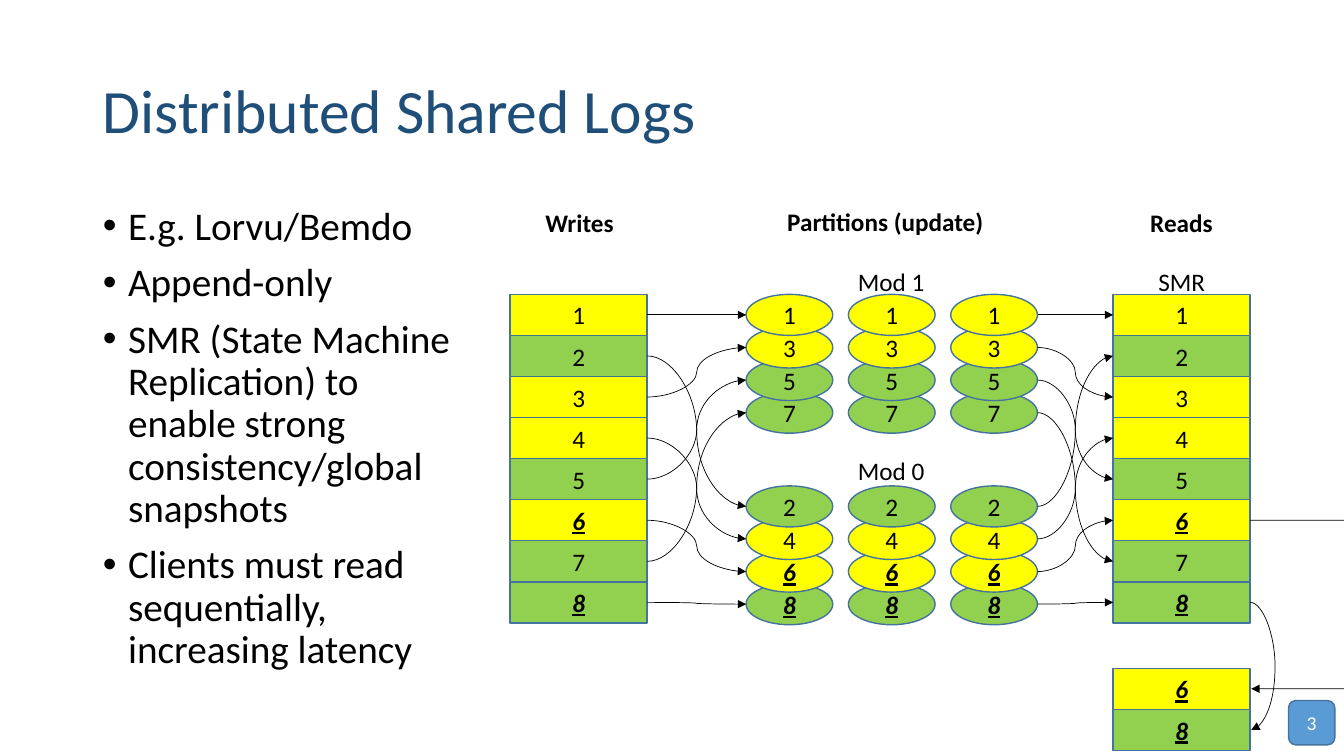
"""Build the Distributed Shared Logs slide."""
from lxml import etree
from pptx import Presentation, util as u
from pptx.dml import color
from pptx.enum import shapes, text
from pptx.oxml import ns

YELLOW, GREEN, BLUE, EDGE = "FFFF00", "92D050", "5B9BD5", "43739E"
hue = color.RGBColor.from_string


def write(para, words, size=18, ink="000000", bold=False, marked=False):
    """Add one formatted run to a paragraph."""
    span = para.add_run()
    span.text = words
    span.font.name = "Calibri"
    span.font.size = u.Pt(size)
    span.font.color.rgb = hue(ink)
    span.font.bold = bold or marked
    span.font.italic = span.font.underline = marked


deck = Presentation()
deck.slide_width, deck.slide_height = u.Inches(13.33), u.Inches(7.5)
page = deck.slides.add_slide(deck.slide_layouts[1])

title, body = page.placeholders
areas = [(title, (0.92, 0.4, 11.5, 1.45)), (body, (0.92, 2, 3.75, 4.76))]
for holder, area in areas:
    holder.left, holder.top, holder.width, holder.height = map(u.Inches, area)
    holder.text_frame.word_wrap = True
    holder.text_frame.auto_size = text.MSO_AUTO_SIZE.NONE

title.text_frame.vertical_anchor = text.MSO_ANCHOR.MIDDLE
heading = title.text_frame.paragraphs[0]
heading.alignment = text.PP_ALIGN.LEFT
heading.line_spacing = 0.9
write(heading, "Distributed Shared Logs", 44, "1F4E79")

points = [
    "E.g. Lorvu/Bemdo",
    "Append-only",
    "SMR (State Machine Replication) to enable strong consistency/global snapshots",
    "Clients must read sequentially, increasing latency",
]
for index, point in enumerate(points):
    para = body.text_frame.add_paragraph() if index else body.text_frame.paragraphs[0]
    para.line_spacing = 0.9
    para.space_before = u.Pt(10)
    props = para._p.get_or_add_pPr()
    props.set("marL", str(u.Inches(0.25)))
    props.set("indent", str(u.Inches(-0.25)))
    write(para, point, 28)

RECT, OVAL = shapes.MSO_SHAPE.RECTANGLE, shapes.MSO_SHAPE.OVAL
TOP, ROW, CELL, TAIL_TOP = 2.92, 3.26 / 8, 1.36, 6.63
WRITES, READS = 5.06, 11.04
REPLICA, REPLICA_GAP, REPLICA_ROW, REPLICAS = 0.86, 2.03 / 2, 0.97 / 3, 3
PARTITIONS = 7.4
PARTITIONS_END = PARTITIONS + (REPLICAS - 1) * REPLICA_GAP + REPLICA
READS_END = READS + CELL
groups = [(TOP, [1, 3, 5, 7]), (4.82, [2, 4, 6, 8])]
entries = range(1, 9)

nodes, replica_middle = [], {}
for left in (WRITES, READS):
    nodes += [(RECT, left, TOP + (entry - 1) * ROW, CELL, entry) for entry in entries]
nodes += [(RECT, READS, TAIL_TOP + row * ROW, CELL, entry) for row, entry in enumerate([6, 8])]
for group_top, members in groups:
    for row, entry in reversed(list(enumerate(members))):
        top = group_top + row * REPLICA_ROW
        replica_middle[entry] = top + ROW / 2
        nodes += [(OVAL, PARTITIONS + replica * REPLICA_GAP, top, REPLICA, entry)
                  for replica in range(REPLICAS)]

nodes = [(kind, left, top, width, ROW, str(entry), 18, "000000",
          YELLOW if entry in (1, 3, 4, 6) else GREEN, entry in (6, 8))
         for kind, left, top, width, entry in nodes]
nodes.append((shapes.MSO_SHAPE.ROUNDED_RECTANGLE, 12.78, 6.95, 0.46, 0.44,
              "3", 14, "FFFFFF", BLUE, False))
for kind, left, top, width, height, words, size, ink, fill, marked in nodes:
    box = page.shapes.add_shape(kind, *map(u.Inches, (left, top, width, height)))
    box.shadow.inherit = False
    box.fill.solid()
    box.fill.fore_color.rgb = hue(fill)
    box.line.color.rgb = hue(EDGE)
    box.line.width = u.Pt(1)
    frame = box.text_frame
    frame.vertical_anchor = text.MSO_ANCHOR.MIDDLE
    frame.paragraphs[0].alignment = text.PP_ALIGN.CENTER
    write(frame.paragraphs[0], words, size, ink, marked=marked)

labels = [
    ("Writes", 5.31, 2.01, 0.89, True),
    ("Partitions (update)", 7.71, 2, 2.17, True),
    ("Reads", 11.31, 2.01, 0.83, True),
    ("Mod 1", 8.41, 2.59, 0.87, False),
    ("Mod 0", 8.41, 4.47, 0.87, False),
    ("SMR", 11.39, 2.59, 0.67, False),
]
for words, left, top, width, bold in labels:
    box = page.shapes.add_textbox(*map(u.Inches, (left, top, width, 0.4)))
    box.text_frame.word_wrap = False
    box.text_frame.auto_size = text.MSO_AUTO_SIZE.SHAPE_TO_FIT_TEXT
    write(box.text_frame.paragraphs[0], words, bold=bold)

middle = {entry: TOP + (entry - 0.5) * ROW for entry in entries}
arrows = []
for entry in entries:
    arrows.append((WRITES + CELL, middle[entry], PARTITIONS, replica_middle[entry], None))
    arrows.append((PARTITIONS_END, replica_middle[entry], READS, middle[entry], None))
for row, (entry, bulge) in enumerate([(6, 2000), (8, 25)]):
    arrows.append((READS_END, middle[entry],
                   READS_END + 0.01, TAIL_TOP + (row + 0.5) * ROW, bulge))

for *ends, bulge in arrows:
    arrow = page.shapes.add_connector(shapes.MSO_CONNECTOR.CURVE, *map(u.Inches, ends))
    arrow.line.color.rgb = hue("000000")
    arrow.line.width = u.Pt(0.5)
    etree.SubElement(arrow.line._get_or_add_ln(), ns.qn("a:tailEnd"), type="triangle")
    look = arrow._element.spPr
    etree.SubElement(look, ns.qn("a:effectLst"))
    if bulge:
        guides = look.find(ns.qn("a:prstGeom")).get_or_add_avLst()
        etree.SubElement(guides, ns.qn("a:gd"), name="adj1", fmla=f"val {bulge * 100000}")

deck.save("out.pptx")
